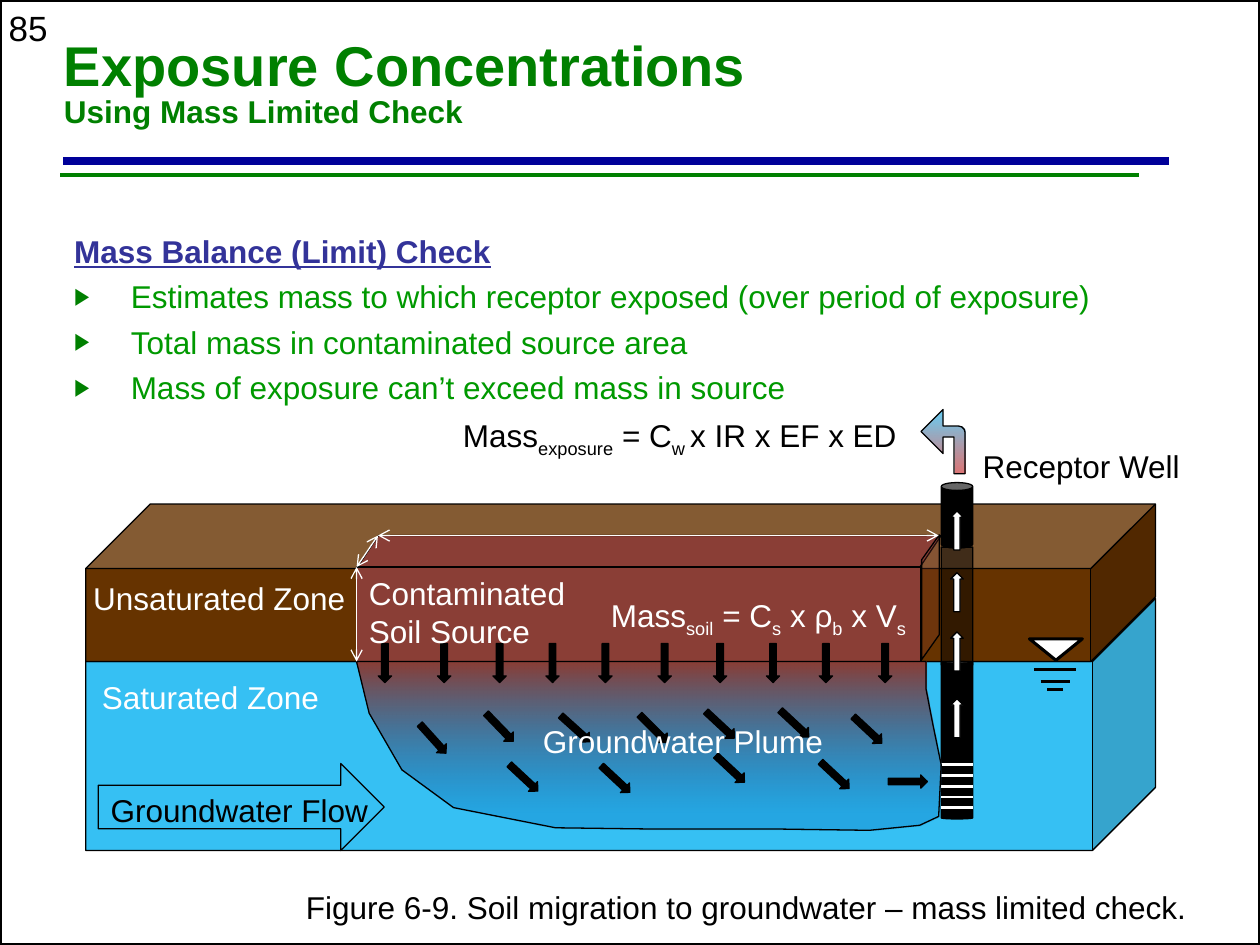
from dataclasses import dataclass
from pptx import Presentation
from pptx.dml.color import RGBColor
from pptx.enum.shapes import MSO_CONNECTOR, MSO_SHAPE as Kind
from pptx.enum.text import MSO_ANCHOR, PP_ALIGN
from pptx.oxml.ns import qn
from pptx.util import Inches, Pt
from lxml.etree import SubElement


@dataclass(frozen=True)
class Theme:
    font: str = "Arial"
    black: str = "000000"
    white: str = "FFFFFF"
    green: str = "008000"
    leaf: str = "009900"
    navy: str = "000099"
    blue: str = "333399"
    soil: str = "663300"
    water: str = "00B0F0"
    deep: str = "0070C0"
    spill: str = "8A3E36"
    red: str = "C00000"
    big: int = 32
    page: int = 20
    body: int = 18
    thin: float = 0.75


T = Theme()
WIDE, HIGH = Inches(10), Inches(7.5)
CELL = WIDE / 100  # grid of 100 columns by 75 rows


def grid(*nums):
    return [round(n * CELL) for n in nums]


def tint(color, code, alpha=100):
    color.rgb = RGBColor.from_string(code)
    return alpha


def fade(item, alphas):
    """Give each colour of the fill its opacity in percent."""
    for node, alpha in zip(item.fill._xPr.iterfind(".//" + qn("a:srgbClr")), alphas):
        if alpha < 100:
            SubElement(node, qn("a:alpha")).set("val", str(alpha * 1000))


def paint(item, fill=None, alpha=100, blend=None, line=T.black, width=T.thin):
    item.shadow.inherit = False
    if blend:
        item.fill.gradient()
        item.fill.gradient_angle = 270
        for stop, (place, code, _) in zip(item.fill.gradient_stops, blend):
            stop.position = place
            stop.color.rgb = RGBColor.from_string(code)
    elif fill:
        item.fill.solid()
        item.fill.fore_color.rgb = RGBColor.from_string(fill)
    else:
        item.fill.background()
    item.line.color.rgb = RGBColor.from_string(line)
    item.line.width = Pt(width)
    if fill or blend:
        # only the fill comes before the line in the shape properties
        clear = [part[2] for part in blend] if blend else [alpha]
        fade(item, clear)


def draw(home, kind, box, adj=(), turn=0, flip=False, **look):
    item = home.shapes.add_shape(kind, *grid(*box))
    for i, value in enumerate(adj):
        item.adjustments[i] = value
    item.rotation = turn
    if flip:
        item._element.spPr.find(qn("a:xfrm")).set("flipH", "1")
    paint(item, **look)
    return item


def rule(home, start, end, color=T.black, width=T.thin, heads=False):
    item = home.shapes.add_connector(MSO_CONNECTOR.STRAIGHT, *grid(*start, *end))
    item.line.color.rgb = RGBColor.from_string(color)
    item.line.width = Pt(width)
    if heads:
        for end_tag in ("a:headEnd", "a:tailEnd"):
            SubElement(item.line._get_or_add_ln(), qn(end_tag)).set("type", "arrow")
    SubElement(item._element.spPr, qn("a:effectLst"))


def mark(para):
    """Triangle bullet with a hanging indent."""
    props = para._p.get_or_add_pPr()
    gap = str(grid(4.5)[0])
    props.set("marL", gap)
    props.set("indent", "-" + gap)
    color = SubElement(props, qn("a:buClr"))
    SubElement(color, qn("a:srgbClr")).set("val", T.green)
    SubElement(props, qn("a:buSzPct")).set("val", "75000")
    SubElement(props, qn("a:buFont")).set("typeface", T.font)
    SubElement(props, qn("a:buChar")).set("char", "▶")


def say(frame, text, size=T.body, color=T.black, bold=False, under=False,
        align=PP_ALIGN.LEFT, wrap=False, bullet=False, more=False, before=0):
    """Write one paragraph; every second piece between bars is a subscript."""
    frame.word_wrap = wrap
    para = frame.add_paragraph() if more else frame.paragraphs[0]
    para.alignment = align
    if before:
        para.space_before = Pt(before)
    if bullet:
        mark(para)
    for i, piece in enumerate(text.split("|")):
        run = para.add_run()
        run.text = piece
        font = run.font
        font.name, font.size, font.bold, font.underline = T.font, Pt(size), bold, under
        font.color.rgb = RGBColor.from_string(color)
        if i % 2:
            run._r.get_or_add_rPr().set("baseline", "-25000")
    return para


def frame(slide, *box):
    return slide.shapes.add_textbox(*grid(*box)).text_frame


def header(slide):
    rule(slide, (5, 12.8), (92.8, 12.8), T.navy, 4.5)
    rule(slide, (4.8, 13.9), (90.4, 13.9), T.green, 2)
    say(frame(slide, -0.3, 0, 5.4, 4.3), "85", size=T.page)
    draw(slide, Kind.RECTANGLE, (0, 0, 100, 75), width=2)
    head = frame(slide, 4.1, 1, 83, 11.5)
    head.vertical_anchor = MSO_ANCHOR.MIDDLE
    look = dict(color=T.green, bold=True, wrap=True)
    say(head, "Exposure Concentrations", size=T.big, **look).line_spacing = 0.85
    say(head, "Using Mass Limited Check", more=True, **look).line_spacing = 0.85


def ground(slide):
    # Soil layers and well casing
    draw(slide, Kind.CUBE, (6.8, 47.5, 84.9, 20), [0.25], fill=T.water, alpha=79)
    draw(slide, Kind.CUBE, (6.8, 40, 84.9, 12.5), [0.41], fill=T.soil)
    draw(slide, Kind.CAN, (74.7, 38.3, 2.5, 5.2), [0.25], fill=T.black)
    draw(slide, Kind.CAN, (74.7, 52.5, 2.5, 12.5), [0.07], fill=T.black)
    for i in range(5):
        y = 60.7 + 0.85 * i
        rule(slide, (74.7, y), (77.2, y), T.white, 1.5)
    # Water table sign
    draw(slide, Kind.ISOSCELES_TRIANGLE, (81.7, 50.7, 4.2, 1.7), turn=180,
         fill=T.white, width=1.75)
    for y, half in ((53.1, 1.65), (54.1, 1.15), (54.7, 0.65)):
        rule(slide, (83.75 - half, y), (83.75 + half, y), width=1.75)
    # Contaminated block and the well through it
    draw(slide, Kind.PARALLELOGRAM, (28.3, 42.5, 46.4, 2.6), [0.67], fill=T.spill)
    draw(slide, Kind.RECTANGLE, (28.3, 45, 44.8, 7.5), fill=T.spill)
    draw(slide, Kind.FLOWCHART_DATA, (68.9, 46.7, 9.9, 1.4), turn=270, flip=True,
         fill=T.spill, alpha=23)
    draw(slide, Kind.CAN, (74.7, 43.4, 2.5, 9.4), [0.02], fill=T.black, alpha=51)


def plume(slide):
    edge = [(74.7, 60.7), (74, 57.3), (73.5, 54.7), (73.5, 52.5), (28.3, 52.5),
            (29.3, 56.6), (31.9, 61.1), (36, 64.1), (44.1, 65.7), (51.8, 65.8),
            (61.7, 65.8), (69, 65.9), (73, 65.5), (74.5, 64.8)]
    pts = [grid(*spot) for spot in edge]
    pen = slide.shapes.build_freeform(*pts[0])
    pen.add_line_segments(pts[1:], close=True)
    paint(pen.convert_to_shape(), blend=[(0, T.spill, 100), (0.9, T.deep, 31)])


def flows(slide):
    down = [(x, 52.1, 90) for x in
            (29, 33.7, 38.1, 42.3, 46.5, 51.2, 55.6, 59.8, 64, 68.7)]
    slant = [(32.8, 58.1, 48), (38.1, 57.2, 46), (44.1, 57.3, 42), (50.3, 57.3, 45),
             (55.6, 57, 43), (56.4, 60.5, 43), (47.3, 61.3, 43), (61.5, 56.9, 43),
             (64.7, 61, 43), (40, 61.2, 43), (67.3, 57.4, 43), (70.5, 61.5, 0)]
    group = slide.shapes.add_group_shape()
    for x, y, turn in down + slant:
        draw(group, Kind.RIGHT_ARROW, (x, y, 3.1, 1.05), turn=turn, fill=T.black)
    # Water rising in the well
    for y in (56.5, 51.2, 46.5, 41.6):
        draw(slide, Kind.RIGHT_ARROW, (74.4, y, 3.1, 1), turn=270, fill=T.white)
    draw(slide, Kind.BENT_ARROW, (73.1, 32.5, 3.5, 5.1), [0.25, 0.5, 0.5, 0.15],
         flip=True, blend=[(0, T.water, 60), (1, T.red, 54)])


def labels(slide):
    for box, text, look in (
        ((6.4, 45.5, 22.2, 4), "Unsaturated Zone", dict(color=T.white)),
        ((7.1, 53.3, 19.4, 4), "Saturated Zone", dict(color=T.white)),
        ((28.3, 45.1, 17.9, 7.1), "Contaminated Soil Source",
         dict(color=T.white, wrap=True)),
        ((42.1, 56.8, 24.5, 4), "Groundwater Plume", dict(color=T.white)),
        ((77, 35, 17.8, 4), "Receptor Well", {}),
        ((35, 32.5, 37.9, 4), "Mass|exposure| = C|w |x IR x EF x ED",
         dict(align=PP_ALIGN.CENTER)),
        ((47.5, 46.8, 26.3, 4), "Mass|soil| = C|s| x ρ|b| x V|s", dict(color=T.white)),
        ((23.3, 70, 72.6, 4),
         "Figure 6-9. Soil migration to groundwater – mass limited check.", {}),
    ):
        say(frame(slide, *box), text, **look)
    flow = draw(slide, Kind.RIGHT_ARROW, (7.8, 60.6, 22.7, 6.9))
    flow.text_frame.vertical_anchor = MSO_ANCHOR.TOP
    say(flow.text_frame, "Groundwater Flow")
    # Size arrows of the contaminated block
    group = slide.shapes.add_group_shape()
    for start, end in (((30, 42.5), (28.3, 45)), ((74.5, 42.5), (30, 42.5)),
                       ((28.3, 52.5), (28.3, 45))):
        rule(group, start, end, T.white, heads=True)


def points(slide):
    body = frame(slide, 4.9, 17.9, 84.6, 12.5)
    say(body, "Mass Balance (Limit) Check", color=T.blue, bold=True, under=True, wrap=True)
    for text in ("Estimates mass to which receptor exposed (over period of exposure)",
                 "Total mass in contaminated source area",
                 "Mass of exposure can’t exceed mass in source"):
        say(body, text, color=T.leaf, wrap=True, bullet=True, more=True, before=4.4)


def main():
    deck = Presentation()
    deck.slide_width, deck.slide_height = WIDE, HIGH
    slide = deck.slides.add_slide(deck.slide_layouts[6])
    for part in (header, ground, plume, flows, labels, points):
        part(slide)
    deck.save("out.pptx")


if __name__ == "__main__":
    main()
